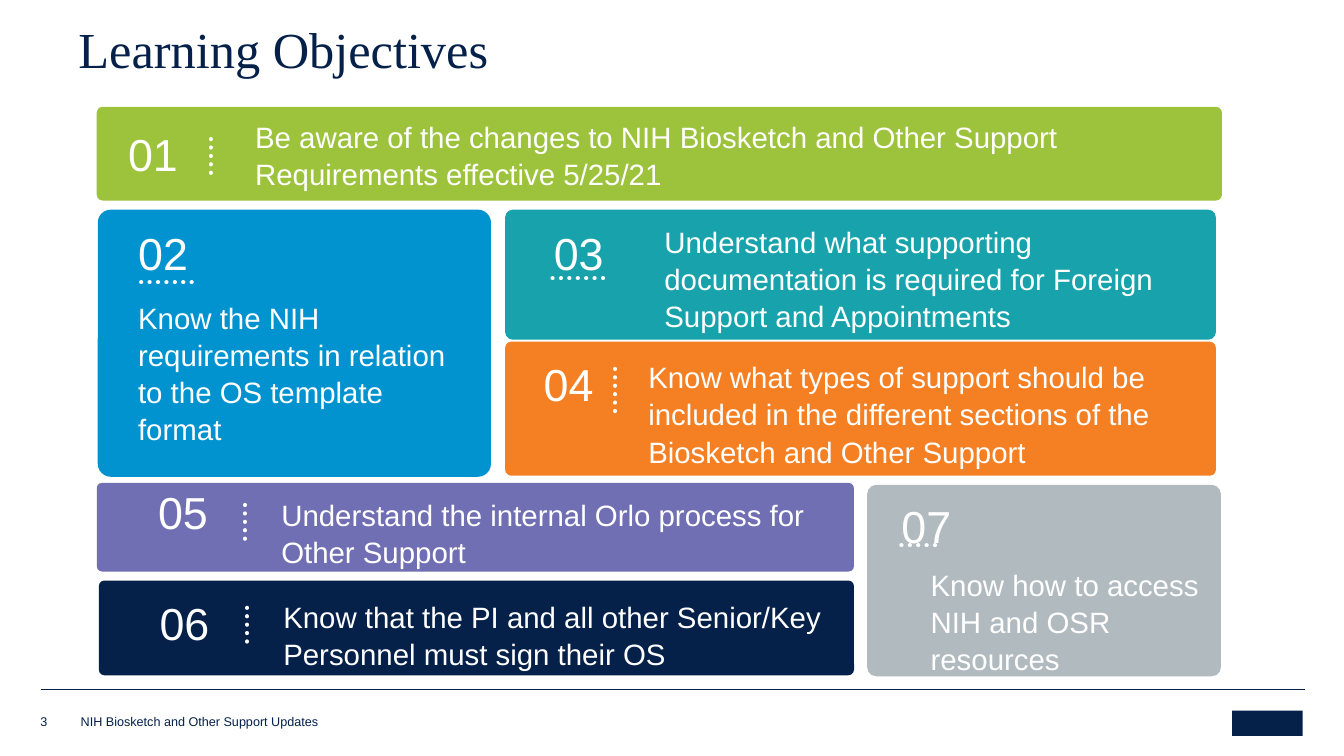
from lxml import etree
from pptx import Presentation
from pptx.dml.color import RGBColor
from pptx.enum.dml import MSO_LINE
from pptx.enum.shapes import MSO_CONNECTOR, MSO_SHAPE
from pptx.enum.text import MSO_ANCHOR, PP_ALIGN
from pptx.oxml.ns import qn
from pptx.util import Inches, Pt

ROUND = MSO_SHAPE.ROUNDED_RECTANGLE
RECT = MSO_SHAPE.RECTANGLE
STRAIGHT = MSO_CONNECTOR.STRAIGHT
DOTS = MSO_LINE.ROUND_DOT
TOP, MIDDLE, BOTTOM = MSO_ANCHOR.TOP, MSO_ANCHOR.MIDDLE, MSO_ANCHOR.BOTTOM
LEFT, CENTER = PP_ALIGN.LEFT, PP_ALIGN.CENTER

COLORS = {
    "navy": "052049", "white": "FFFFFF", "green": "9DC23B", "blue": "0093D0",
    "teal": "18A3AC", "orange": "F58024", "purple": "716FB3", "gray": "B1BABF",
}
PAD = (0.13, 0.07)

CARDS = [
    ("01", "green", (0.96, 1.06, 11.16, 0.93), 0.063,
     (1.14, 1.16, 0.8, 0.5), LEFT, (2.09, 1.38, 2.09, 1.78),
     (2.4, 1.13, 9.28, 0.8), MIDDLE,
     "Be aware of the changes to NIH Biosketch and Other Support Requirements effective 5/25/21"),
    ("02", "blue", (0.97, 2.08, 3.9, 2.65), 0.049,
     (1.24, 2.14, 0.82, 0.53), LEFT, (1.4, 2.8, 1.93, 2.8),
     (1.24, 2.89, 3.57, 1.98), TOP,
     "Know the NIH requirements in relation to the OS template format"),
    ("03", "teal", (5.01, 2.08, 7.05, 1.29), 0.06,
     (5.33, 2.14, 0.82, 0.5), CENTER, (5.48, 2.76, 6.01, 2.76),
     (6.46, 2.14, 5.73, 1.13), TOP,
     "Understand what supporting documentation is required for Foreign Support and Appointments"),
    ("04", "orange", (5.01, 3.39, 7.05, 1.33), 0.046,
     (5.23, 3.44, 0.82, 0.63), CENTER, (6.1, 3.66, 6.1, 4.15),
     (6.3, 3.48, 5.76, 1.04), TOP,
     "Know what types of support should be included in the different sections of the "
     "Biosketch and Other Support"),
    ("05", "purple", (0.96, 4.79, 7.51, 0.88), 0.06,
     (1.33, 4.71, 0.97, 0.5), CENTER, (2.43, 5.01, 2.43, 5.41),
     (2.66, 4.84, 5.81, 0.65), TOP,
     "Understand the internal Orlo process for Other Support"),
    ("07", "gray", (8.6, 4.81, 3.51, 1.9), 0.049,
     (8.81, 4.85, 0.85, 0.56), LEFT, (8.94, 5.41, 9.35, 5.41),
     (9.1, 5.54, 3.16, 1.03), TOP,
     "Know how to access NIH and OSR resources"),
    ("06", "navy", (0.98, 5.76, 7.49, 0.94), 0.06,
     (1.35, 5.81, 0.96, 0.43), CENTER, (2.45, 6.03, 2.45, 6.37),
     (2.68, 5.86, 5.79, 0.78), TOP,
     "Know that the PI and all other Senior/Key Personnel must sign their OS"),
]


class Deck:
    """Holds the style and the current slide, and draws each kind of element."""

    def __init__(self):
        self.prs = Presentation()
        self.prs.slide_width = Inches(13.33)
        self.prs.slide_height = Inches(7.5)
        self.slide = self.prs.slides.add_slide(self.prs.slide_layouts[6])
        self.home = self.slide.shapes

    def color(self, name):
        return RGBColor.from_string(COLORS[name])

    def box(self, kind, place, fill):
        shape = self.home.add_shape(kind, *map(Inches, place))
        shape.shadow.inherit = False
        shape.fill.solid()
        shape.fill.fore_color.rgb = self.color(fill)
        shape.line.fill.background()
        return shape

    def line(self, ends, color, width, dotted=False):
        line = self.home.add_connector(STRAIGHT, *map(Inches, ends))
        line.line.color.rgb = self.color(color)
        line.line.width = Pt(width)
        if dotted:
            line.line.dash_style = DOTS
            line.line._get_or_add_ln().set("cap", "rnd")
        etree.SubElement(line._element.spPr, qn("a:effectLst"))

    def text(self, place, words, size, color, font="Arial", align=LEFT,
             anchor=TOP, pad=(0, 0), space=1.0):
        frame = self.home.add_textbox(*map(Inches, place)).text_frame
        frame.word_wrap = True
        frame.vertical_anchor = anchor
        frame.margin_left = frame.margin_right = Inches(pad[0])
        frame.margin_top = frame.margin_bottom = Inches(pad[1])
        para = frame.paragraphs[0]
        para.alignment = align
        para.line_spacing = space
        run = para.add_run()
        run.text = words
        run.font.name = font
        run.font.size = Pt(size)
        run.font.color.rgb = self.color(color)

    def card(self, label, fill, place, curve, spot, align, dots, area, anchor, words):
        self.home = self.slide.shapes.add_group_shape().shapes
        self.box(ROUND, place, fill).adjustments[0] = curve
        self.line(dots, "white", 3, dotted=True)
        self.text(area, words, 21, "white", anchor=anchor, pad=PAD, space=1.05)
        self.text(spot, label, 32, "white", align=align, pad=PAD, space=1.05)
        self.home = self.slide.shapes


def main():
    deck = Deck()
    deck.line((0.41, 6.84, 12.94, 6.84), "navy", 0.25)
    deck.box(RECT, (12.22, 7.05, 0.7, 0.25), "navy")
    deck.text((0.4, 7.06, 0.36, 0.17), "3", 9, "navy", anchor=BOTTOM)
    deck.text((0.8, 7.08, 6.29, 0.15), "NIH Biosketch and Other Support Updates",
              9, "navy", anchor=BOTTOM)
    deck.text((0.68, 0.22, 11.5, 1.45), "Learning Objectives", 36, "navy",
              font="Times New Roman", pad=(0.1, 0.05), space=0.85)
    for card in CARDS:
        deck.card(*card)
    deck.prs.save("out.pptx")


if __name__ == "__main__":
    main()
